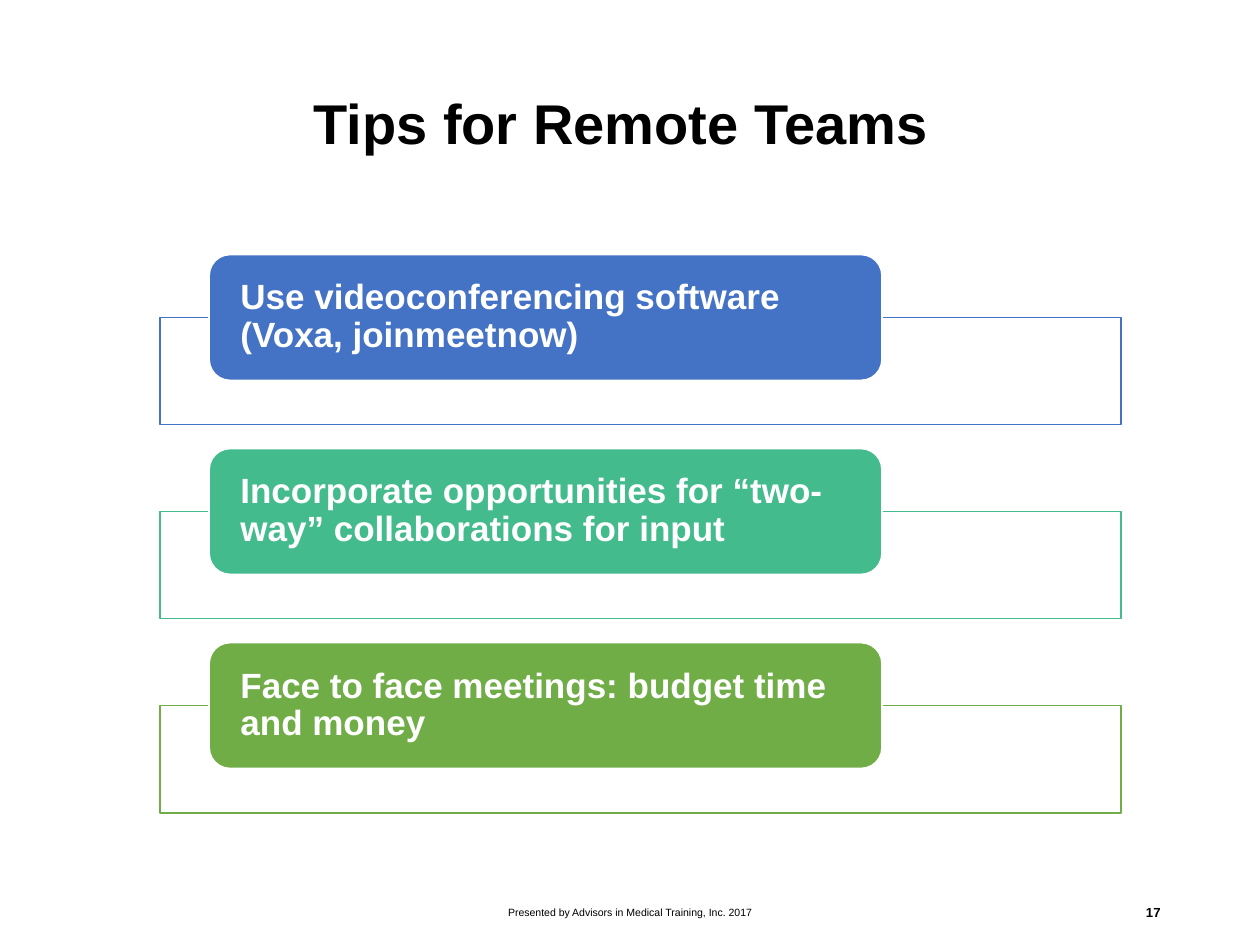
from pptx import Presentation
from pptx.dml.color import RGBColor
from pptx.enum.shapes import MSO_SHAPE
from pptx.enum.text import MSO_ANCHOR, PP_ALIGN
from pptx.util import Inches, Pt

TIPS = [
    ("Use videoconferencing software (Voxa, joinmeetnow)", "4472C4"),
    ("Incorporate opportunities for “two-way” collaborations for input", "43BB8D"),
    ("Face to face meetings: budget time and money", "70AD47"),
]


def color(value):
    return RGBColor.from_string(value)


def write_text(shape, text, text_color, size, bold=False, align=PP_ALIGN.LEFT,
               line_spacing=1.0, side_inset=0.1):
    frame = shape.text_frame
    frame_format = {
        "word_wrap": True,
        "vertical_anchor": MSO_ANCHOR.MIDDLE,
        "margin_left": Inches(side_inset),
        "margin_right": Inches(side_inset),
        "margin_top": 0,
        "margin_bottom": 0,
    }
    for name, value in frame_format.items():
        setattr(frame, name, value)
    paragraph = frame.paragraphs[0]
    paragraph.alignment = align
    paragraph.line_spacing = line_spacing
    run = paragraph.add_run()
    run.text = text
    for name, value in {"name": "Arial", "size": Pt(size), "bold": bold}.items():
        setattr(run.font, name, value)
    run.font.color.rgb = color(text_color)


def add_label(slide, box, text, size, **text_format):
    label = slide.shapes.add_textbox(*(Inches(value) for value in box))
    write_text(label, text, "000000", size, **text_format)


def add_box(slide, kind, box, fill, line):
    shape = slide.shapes.add_shape(kind, *(Inches(value) for value in box))
    shape.shadow.inherit = False
    shape.fill.solid()
    shape.fill.fore_color.rgb = color(fill)
    shape.line.color.rgb = color(line)
    shape.line.width = Pt(1)
    return shape


def add_tips(slide, left, top, width, pitch):
    for index, (text, accent) in enumerate(TIPS):
        row_top = top + index * pitch
        # Outlined frame behind the heading
        add_box(slide, MSO_SHAPE.RECTANGLE,
                (left, row_top + 0.5, width, 0.85), "FFFFFF", accent)
        # Rounded heading, 70 % of the frame's width
        heading = add_box(slide, MSO_SHAPE.ROUNDED_RECTANGLE,
                          (left + 0.39, row_top, width * 0.7, 1), accent, "FFFFFF")
        write_text(heading, text, "FFFFFF", 20, bold=True,
                   line_spacing=0.9, side_inset=0.2)


def add_footer(slide, top, height):
    add_label(slide, (3.31, top, 3.38, height),
              "Presented by Advisors in Medical Training, Inc. 2017", 6,
              align=PP_ALIGN.CENTER)
    add_label(slide, (7.06, top, 2.25, height), "17", 7.5,
              bold=True, align=PP_ALIGN.RIGHT)


def main():
    presentation = Presentation()
    presentation.slide_width = Inches(10)
    presentation.slide_height = Inches(7.5)
    slide = presentation.slides.add_slide(presentation.slide_layouts[6])

    # Title
    add_label(slide, (2.39, 0.28, 7.61, 1.45), "Tips for Remote Teams", 32,
              bold=True, line_spacing=0.9)
    add_tips(slide, 1.27, 2.02, 7.63, 1.54)
    add_footer(slide, 7.04, 0.4)
    presentation.save("out.pptx")


if __name__ == "__main__":
    main()
